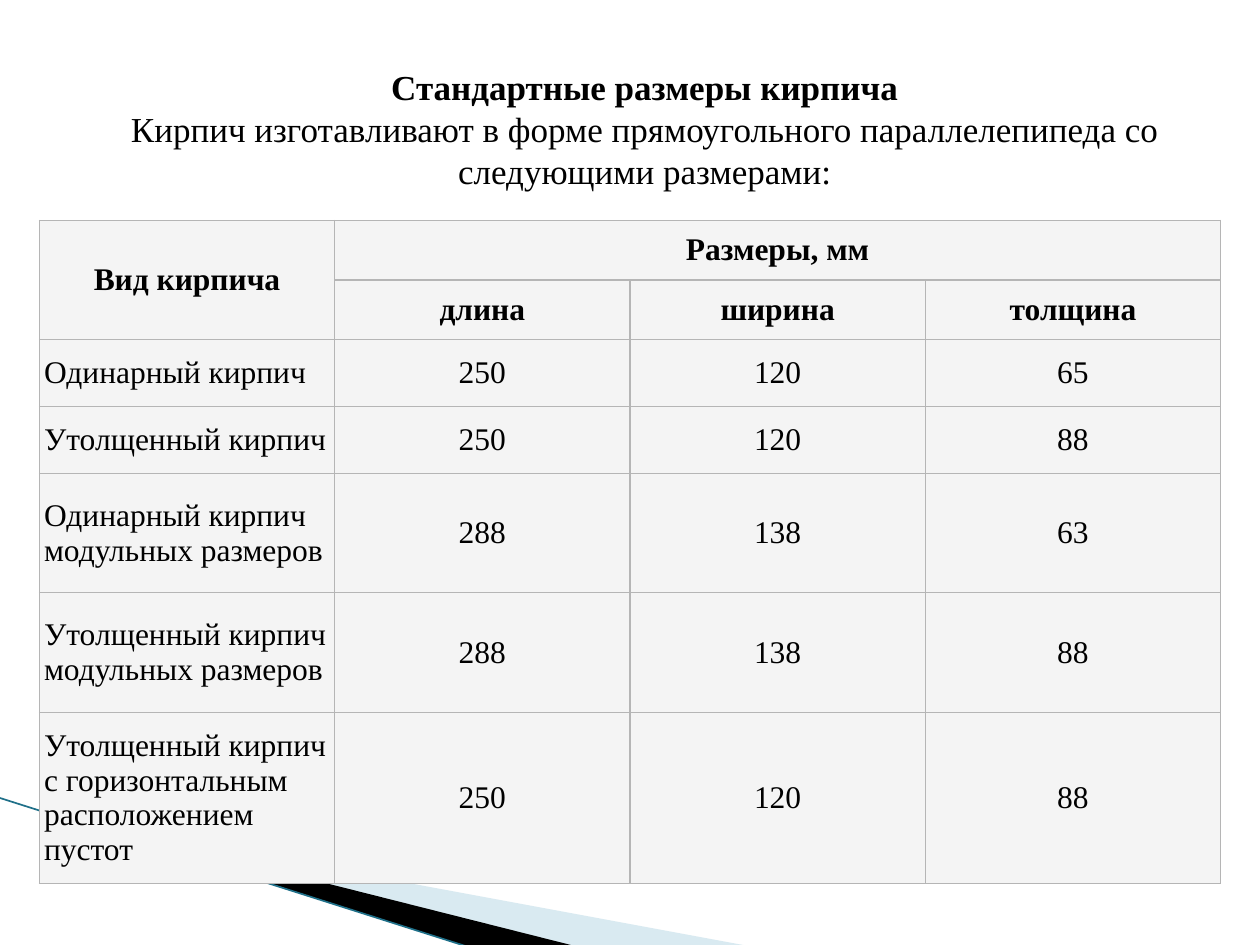
from dataclasses import dataclass

from pptx import Presentation
from pptx.dml.color import RGBColor
from pptx.enum.shapes import MSO_CONNECTOR
from pptx.enum.text import MSO_ANCHOR, PP_ALIGN
from pptx.oxml import parse_xml
from pptx.oxml.ns import nsdecls, qn
from pptx.slide import Slide
from pptx.table import _Cell
from pptx.util import Pt
from lxml.etree import SubElement


@dataclass(frozen=True)
class Theme:
    font: str = "Times New Roman"
    title_size: float = 20
    table_size: float = 18
    text: str = "000000"
    cell: str = "F4F4F4"
    border: str = "B5B5B5"
    wedge: str = "A0CBDC"
    edge: str = "1F7089"


@dataclass(frozen=True)
class Wedge:
    frame: tuple[float, float, float, float]
    points: tuple[tuple[float, float], ...]
    color: str
    alpha: int = 100


@dataclass(frozen=True)
class Row:
    height: float
    texts: tuple[str, ...]
    header: bool = False


THEME = Theme()

WEDGES = (
    Wedge((56.2, 393.8, 299.5, 113.8),
          ((39.6, 468.7), (428.4, 540.7), (328.3, 540.7), (39.6, 468)), THEME.wedge, 40),
    Wedge((-4.3, 455.8, 299.5, 66.2),
          ((38.2, 467.3), (329, 540.7), (269, 541.4), (38.9, 468)), THEME.text),
)

TITLE = (
    ("Стандартные размеры кирпича", True),
    ("Кирпич изготавливают в форме прямоугольного параллелепипеда со следующими размерами:", False),
)

ROWS = (
    Row(34, ("Вид кирпича", "Размеры, мм", "", ""), True),
    Row(34, ("", "длина", "ширина", "толщина"), True),
    Row(38.25, ("Одинарный кирпич", "250", "120", "65")),
    Row(38.25, ("Утолщенный кирпич", "250", "120", "88")),
    Row(68.25, ("Одинарный кирпич модульных размеров", "288", "138", "63")),
    Row(68.25, ("Утолщенный кирпич модульных размеров", "288", "138", "88")),
    Row(98, ("Утолщенный кирпич с горизонтальным расположением пустот", "250", "120", "88")),
)


def format_paragraph(p, size: float, bold: bool, align: PP_ALIGN) -> None:
    """Apply the theme font and the given alignment to a paragraph."""
    p.alignment = align
    for r in p.runs:
        r.font.name = THEME.font
        r.font.size = Pt(size)
        r.font.bold = bold
        r.font.color.rgb = RGBColor.from_string(THEME.text)


def set_frame(sp, frame: tuple[float, float, float, float]) -> None:
    """Give a freeform a new frame while its outline stays in place."""
    left, top, width, height = (Pt(v) for v in frame)
    dx, dy = sp.left - left, sp.top - top
    outline = sp._element.spPr.find(f".//{qn('a:path')}")
    outline.set("w", str(width))
    outline.set("h", str(height))
    for pt in outline.iter(qn("a:pt")):
        pt.set("x", str(int(pt.get("x")) + dx))
        pt.set("y", str(int(pt.get("y")) + dy))
    sp.left, sp.top, sp.width, sp.height = left, top, width, height


def draw_wedge(s: Slide, wedge: Wedge) -> None:
    """Draw one filled corner wedge."""
    points = [(Pt(x), Pt(y)) for x, y in wedge.points]
    builder = s.shapes.build_freeform(*points[0], scale=1.0)
    builder.add_line_segments(points[1:], close=True)
    sp = builder.convert_to_shape()
    set_frame(sp, wedge.frame)
    sp.shadow.inherit = False
    sp.fill.solid()
    sp.fill.fore_color.rgb = RGBColor.from_string(wedge.color)
    sp.line.fill.background()
    if wedge.alpha < 100:
        color = sp._element.spPr.find(f".//{qn('a:srgbClr')}")
        SubElement(color, qn("a:alpha"), val=str(wedge.alpha * 1000))


def draw_edge(s: Slide) -> None:
    """Draw the thin line along the corner wedges."""
    line = s.shapes.add_connector(MSO_CONNECTOR.STRAIGHT, Pt(-0.7), Pt(455.8), Pt(268.5), Pt(541.4))
    line.line.color.rgb = RGBColor.from_string(THEME.edge)
    line.line.width = Pt(0.95)
    SubElement(line._element.spPr, qn("a:effectLst"))


def draw_title(s: Slide) -> None:
    """Fill the title placeholder with the heading and its introduction."""
    sp = s.shapes.title
    sp.left, sp.top, sp.width, sp.height = Pt(67.5), Pt(33.3), Pt(601.9), Pt(79.9)
    tf = sp.text_frame
    tf.word_wrap = True
    tf.vertical_anchor = MSO_ANCHOR.MIDDLE
    tf.text = "\n".join(text for text, _ in TITLE)
    for p, (_, bold) in zip(tf.paragraphs, TITLE):
        p.line_spacing = Pt(24)
        format_paragraph(p, THEME.title_size, bold, PP_ALIGN.CENTER)


def draw_cell(cell: _Cell, text: str, header: bool, align: PP_ALIGN) -> None:
    """Write and style one table cell with its four borders."""
    tc_pr = cell._tc.get_or_add_tcPr()
    for side in ("lnL", "lnR", "lnT", "lnB"):
        tc_pr.append(parse_xml(
            f'<a:{side} {nsdecls("a")} w="{Pt(0.75)}"><a:solidFill>'
            f'<a:srgbClr val="{THEME.border}"/></a:solidFill></a:{side}>'))
    cell.fill.solid()
    cell.fill.fore_color.rgb = RGBColor.from_string(THEME.cell)
    cell.vertical_anchor = MSO_ANCHOR.MIDDLE
    cell.margin_left = cell.margin_right = Pt(2.7)
    cell.margin_top = cell.margin_bottom = Pt(6.5 if header else 3.6)
    cell.text_frame.text = text
    format_paragraph(cell.text_frame.paragraphs[0], THEME.table_size, header, align)


def draw_table(s: Slide) -> None:
    """Draw the table of brick sizes with its merged headings."""
    height = sum(row.height for row in ROWS)
    table = s.shapes.add_table(len(ROWS), 4, Pt(22.5), Pt(126), Pt(675), Pt(height)).table
    for i, row in enumerate(ROWS):
        table.rows[i].height = Pt(row.height)
        for j, text in enumerate(row.texts):
            align = PP_ALIGN.CENTER if row.header or j else PP_ALIGN.LEFT
            draw_cell(table.cell(i, j), text, row.header, align)
    table.cell(0, 0).merge(table.cell(1, 0))
    table.cell(0, 1).merge(table.cell(0, 3))


def main() -> None:
    """Build the slide and save it."""
    prs = Presentation()
    prs.slide_width, prs.slide_height = Pt(720), Pt(540)
    s = prs.slides.add_slide(prs.slide_layouts[5])
    for wedge in WEDGES:
        draw_wedge(s, wedge)
    draw_edge(s)
    draw_title(s)
    draw_table(s)
    prs.save("out.pptx")


if __name__ == "__main__":
    main()
